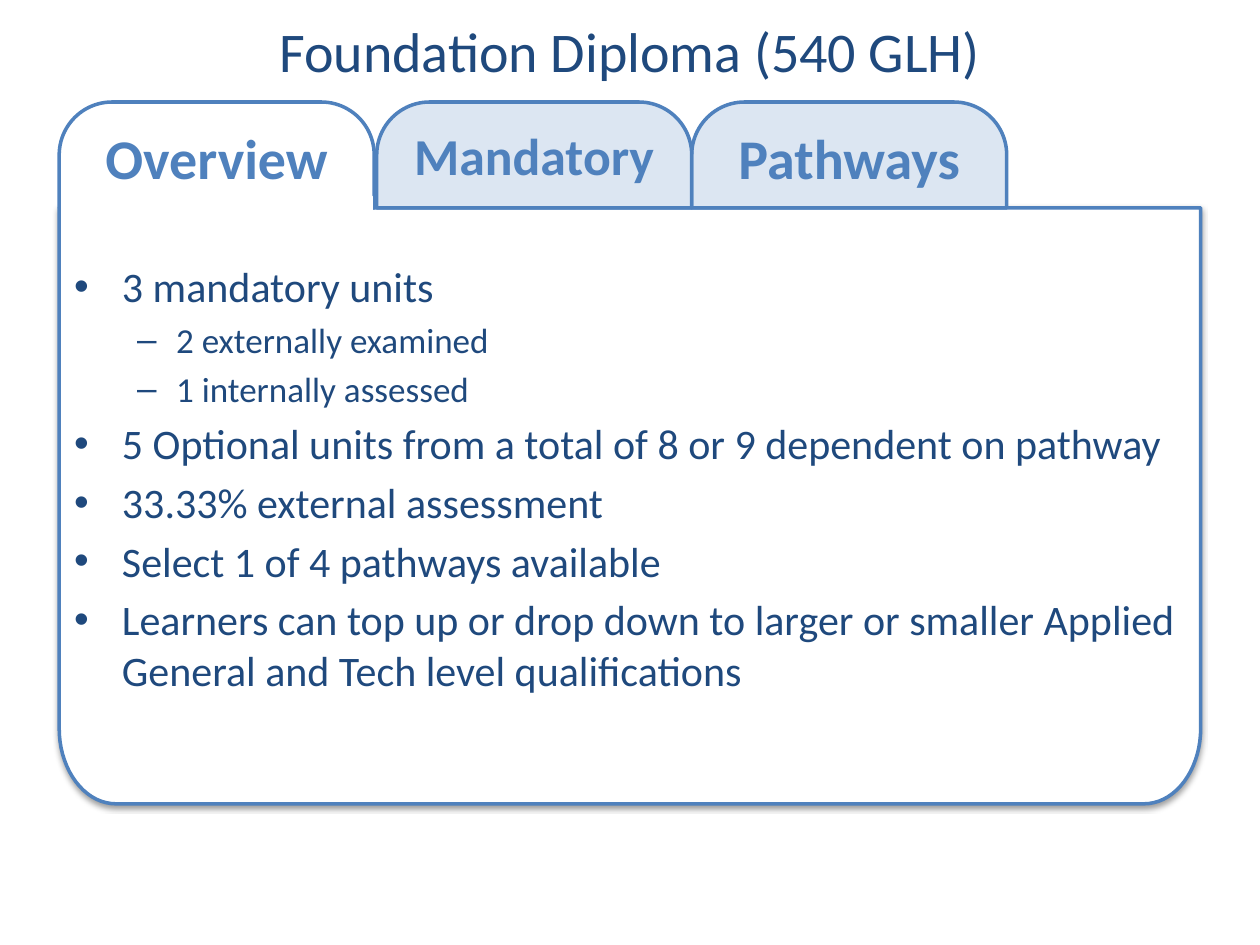
from math import cos, radians, sin

from lxml import etree
from pptx import Presentation
from pptx.dml.color import RGBColor
from pptx.enum.shapes import MSO_SHAPE
from pptx.enum.text import MSO_ANCHOR, PP_ALIGN
from pptx.oxml import parse_xml
from pptx.oxml.ns import nsdecls, qn
from pptx.util import Inches, Pt

NAVY = RGBColor(0x1F, 0x49, 0x7D)
BLUE = RGBColor(0x4F, 0x81, 0xBD)
PALE = RGBColor(0xDC, 0xE6, 0xF2)
WHITE = RGBColor(0xFF, 0xFF, 0xFF)
TAB = MSO_SHAPE.ROUND_2_SAME_RECTANGLE
RECT = MSO_SHAPE.RECTANGLE
TOP, MIDDLE = MSO_ANCHOR.TOP, MSO_ANCHOR.MIDDLE
CENTER = PP_ALIGN.CENTER

TITLE = {"size": Pt(32), "color": NAVY}
TAB_TEXT = {"size": Pt(32), "color": BLUE, "bold": True}
LEVELS = [
    {"bullet": "•", "left": 0.38, "hang": 0.38, "size": 24},
    {"bullet": "–", "left": 0.81, "hang": 0.31, "size": 20},
]

TAB_TOP, TAB_W, TAB_H = 0.81, 2.5, 0.84
TABS = [
    ("Pathways", 5.49, PALE, 32),
    ("Mandatory", 2.99, PALE, 29.6),
    ("Overview", 0.47, WHITE, 32),
]
ITEMS = [
    (0, "3 mandatory units"),
    (1, "2 externally examined"),
    (1, "1 internally assessed"),
    (0, "5 Optional units from a total of 8 or 9 dependent on pathway"),
    (0, "33.33% external assessment"),
    (0, "Select 1 of 4 pathways available"),
    (0, "Learners can top up or drop down to larger or smaller Applied "
        "General and Tech level qualifications"),
]


class Deck:
    font = "Calibri"
    line_width = Pt(2)

    def __init__(self, prs):
        self.s = prs.slides.add_slide(prs.slide_layouts[5])

    def style_font(self, font, values):
        for name, value in {"name": self.font, **values}.items():
            if name == "color":
                font.color.rgb = value
            else:
                setattr(font, name, value)

    def label(self, tf, text, values, anchor):
        tf.word_wrap = True
        tf.vertical_anchor = anchor
        p = tf.paragraphs[0]
        p.alignment = CENTER
        r = p.add_run()
        r.text = text
        self.style_font(r.font, values)

    def paint(self, sp, fill, line):
        sp.shadow.inherit = False
        sp.fill.solid()
        sp.fill.fore_color.rgb = fill
        sp.line.color.rgb = line
        sp.line.width = self.line_width

    def title(self, text, box):
        sp = self.s.shapes.title
        sp.left, sp.top, sp.width, sp.height = map(Inches, box)
        self.label(sp.text_frame, text, TITLE, MIDDLE)

    def panel(self, left, top, right, bottom, rx, ry):
        corners = [(right - rx, 0), (left + rx, 90)]
        points = [(right, top)]
        for cx, start in corners:
            for angle in range(start, start + 91, 5):
                a = radians(angle)
                points.append((cx + rx * cos(a), bottom - ry + ry * sin(a)))
        fb = self.s.shapes.build_freeform(Inches(left), Inches(top))
        fb.add_line_segments([(Inches(x), Inches(y)) for x, y in points])
        sp = fb.convert_to_shape()
        self.paint(sp, WHITE, BLUE)
        effects = sp.element.spPr.find(qn("a:effectLst"))
        effects.append(parse_xml(
            f'<a:outerShdw {nsdecls("a")} blurRad="{Pt(3.1)}" dist="{Pt(1.6)}" '
            'dir="5400000" rotWithShape="0"><a:srgbClr val="000000">'
            '<a:alpha val="38000"/></a:srgbClr></a:outerShdw>'))

    def shape(self, kind, box, fill, line):
        sp = self.s.shapes.add_shape(kind, *map(Inches, box))
        self.paint(sp, fill, line)
        return sp

    def tab(self, text, left, fill, size):
        sp = self.shape(TAB, (left, TAB_TOP, TAB_W, TAB_H), fill, BLUE)
        sp.adjustments[0] = 0.5
        self.label(sp.text_frame, text, {**TAB_TEXT, "size": Pt(size)}, TOP)

    def bullets(self, items, box):
        tf = self.s.shapes.add_textbox(*map(Inches, box)).text_frame
        tf.word_wrap = True
        for i, (level, text) in enumerate(items):
            style = LEVELS[level]
            p = tf.paragraphs[0] if i == 0 else tf.add_paragraph()
            p.level = level
            if i:
                p.space_before = Pt(style["size"] * 0.2)
            pPr = p._p.get_or_add_pPr()
            pPr.set("marL", str(Inches(style["left"])))
            pPr.set("indent", str(-Inches(style["hang"])))
            etree.SubElement(pPr, qn("a:buFont")).set("typeface", "Arial")
            etree.SubElement(pPr, qn("a:buChar")).set("char", style["bullet"])
            r = p.add_run()
            r.text = text
            self.style_font(r.font, {"size": Pt(style["size"]), "color": NAVY})


def main():
    prs = Presentation()
    prs.slide_width, prs.slide_height = Inches(10), Inches(7.5)
    deck = Deck(prs)
    deck.title("Foundation Diploma (540 GLH)", (0, 0, 10, 0.79))
    deck.panel(0.47, 1.65, 9.53, 6.38, 0.45, 0.6)
    for tab in TABS:
        deck.tab(*tab)
    deck.bullets(ITEMS, (0.49, 2.02, 9.06, 3.99))
    deck.shape(RECT, (0.5, 1.56, 2.45, 0.17), WHITE, WHITE)
    prs.save("out.pptx")


if __name__ == "__main__":
    main()
